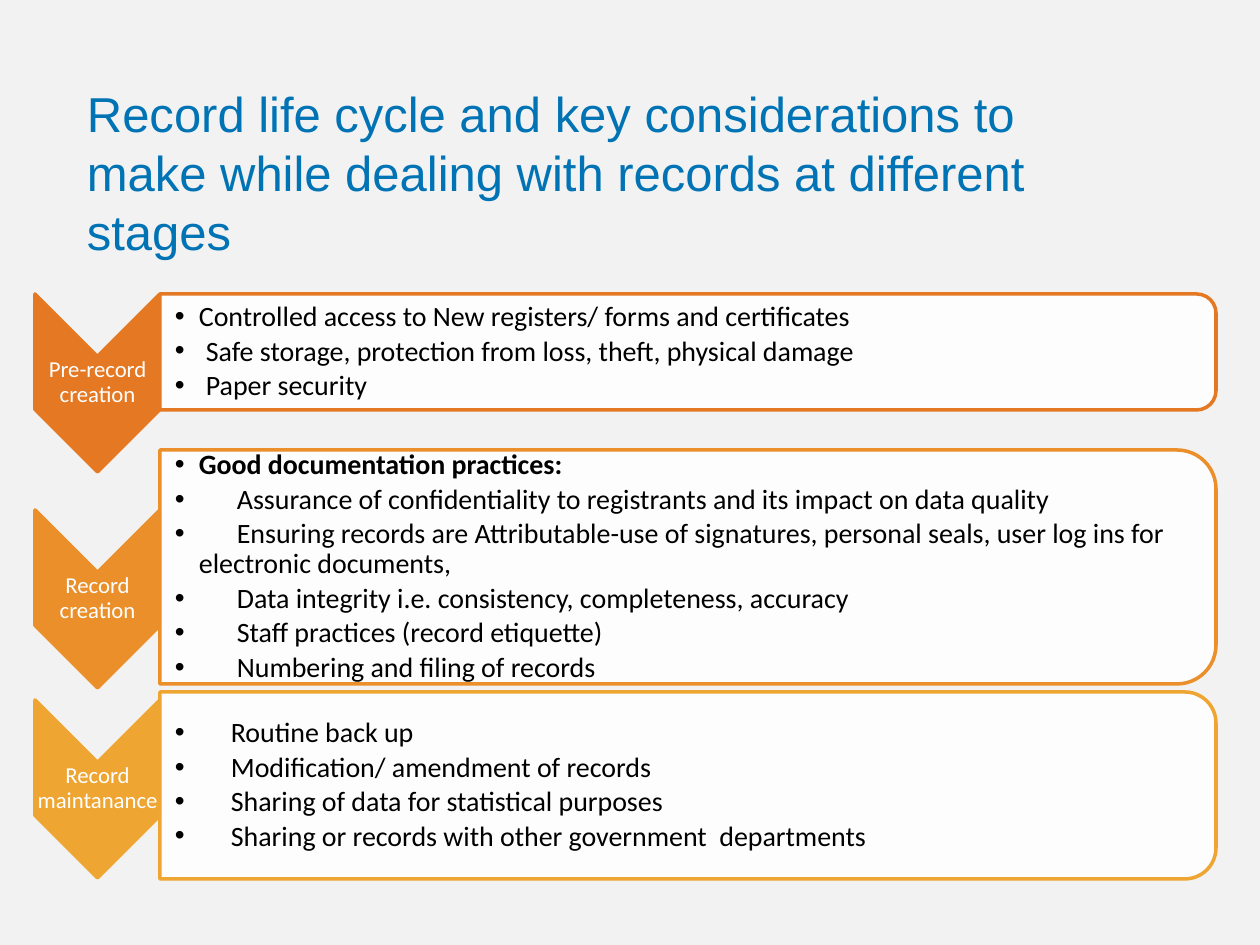
from lxml import etree
from pptx import Presentation
from pptx.dml.color import RGBColor
from pptx.enum.shapes import MSO_SHAPE
from pptx.enum.text import MSO_ANCHOR, PP_ALIGN
from pptx.oxml.ns import qn
from pptx.util import Inches, Pt

CHEVRON = MSO_SHAPE.CHEVRON
ROUNDED_END = MSO_SHAPE.ROUND_2_SAME_RECTANGLE
MIDDLE, TOP = MSO_ANCHOR.MIDDLE, MSO_ANCHOR.TOP
CENTER = PP_ALIGN.CENTER

GREY = RGBColor(0xF2, 0xF2, 0xF2)
BLUE = RGBColor(0x00, 0x73, 0xB5)
WHITE = RGBColor(0xFF, 0xFF, 0xFF)
BLACK = RGBColor(0x00, 0x00, 0x00)
DARK_ORANGE = RGBColor(0xE4, 0x78, 0x23)
ORANGE = RGBColor(0xEA, 0x8F, 0x2A)
AMBER = RGBColor(0xEF, 0xA5, 0x31)

PX = Inches(1) / 126
CHEVRON_LEFT, CHEVRON_WIDTH, CHEVRON_HEIGHT = 35, 125, 178
PANEL_LEFT, PANEL_WIDTH = 160, 1056
BULLET_GAP = 24


def px(length):
    return round(length * PX)


def add_turned(kind, left, top, width, height, fill, line):
    """Add a shape turned by 90 degrees that covers the given area."""
    shape = slide.shapes.add_shape(
        kind, px(left + (width - height) / 2), px(top + (height - width) / 2),
        px(height), px(width))
    shape.rotation = 90
    shape.shadow.inherit = False
    shape.fill.solid()
    shape.fill.fore_color.rgb = fill
    shape.line.color.rgb = line
    shape.line.width = Pt(2)
    return shape


def add_text(left, top, width, height, margins, anchor):
    frame = slide.shapes.add_textbox(px(left), px(top), px(width), px(height)).text_frame
    frame.word_wrap = True
    frame.vertical_anchor = anchor
    frame.margin_left, frame.margin_top, frame.margin_right, frame.margin_bottom = map(px, margins)
    return frame


prs = Presentation()
prs.slide_width, prs.slide_height = Inches(10), Inches(7.5)
slide = prs.slides.add_slide(prs.slide_layouts[6])
slide.background.fill.solid()
slide.background.fill.fore_color.rgb = GREY

# Title
title = add_text(74, 66, 1086, 209, (13, 18, 13, 6), TOP)
title.text = ("Record life cycle and key considerations to make "
              "while dealing with records at different stages")
heading = title.paragraphs[0]
heading.font.name, heading.font.size = "Arial", Pt(28)
heading.font.color.rgb = BLUE

# Stages: name, colour, chevron top, panel top, panel height, text indent, considerations
stages = [
    ("Pre-record creation", DARK_ORANGE, 294, 294, 116, 31, [
        "Controlled access to New registers/ forms and certificates",
        "Safe storage, protection from loss, theft, physical damage",
        "Paper security"]),
    ("Record creation", ORANGE, 510, 450, 234, 62, [
        "Good documentation practices:",
        "Assurance of confidentiality to registrants and its impact on data quality",
        "\tEnsuring records are Attributable-use of signatures, personal seals, "
        "user log ins for electronic documents,",
        "Data integrity i.e. consistency, completeness, accuracy",
        "Staff practices (record etiquette)",
        "Numbering and filing of records"]),
    ("Record maintanance", AMBER, 700, 692, 187, 56, [
        "Routine back up",
        "Modification/ amendment of records",
        "Sharing of data for statistical purposes",
        "Sharing or records with other government  departments"]),
]

for name, color, chevron_top, panel_top, panel_height, indent, considerations in stages:
    # Stage chevron and its label
    add_turned(CHEVRON, CHEVRON_LEFT, chevron_top, CHEVRON_WIDTH, CHEVRON_HEIGHT, color, color)
    label = add_text(CHEVRON_LEFT, chevron_top + 62, CHEVRON_WIDTH, 53, (1, 1, 1, 1), MIDDLE)
    label.text = name
    caption = label.paragraphs[0]
    caption.alignment, caption.line_spacing = CENTER, 0.9
    caption.font.name, caption.font.size = "Calibri", Pt(13)
    caption.font.color.rgb = WHITE

    # Panel, slightly see-through
    panel = add_turned(ROUNDED_END, PANEL_LEFT, panel_top, PANEL_WIDTH, panel_height, WHITE, color)
    white = panel.fill._xPr.find(qn("a:solidFill"))[0]
    etree.SubElement(white, qn("a:alpha")).set("val", "90000")

    # Considerations
    frame = add_text(PANEL_LEFT, panel_top + 6, PANEL_WIDTH - 11, panel_height - 12,
                     (15, 1, 1, 1), MIDDLE)
    frame.text = "\n".join(considerations)
    for number, paragraph in enumerate(frame.paragraphs):
        tabbed = paragraph.text.startswith("\t")
        hanging = BULLET_GAP if number == 0 and indent != 56 or tabbed else indent
        props = paragraph._p.get_or_add_pPr()
        props.set("marL", str(px(hanging)))
        props.set("indent", str(-px(hanging)))
        paragraph.line_spacing = 0.9
        paragraph.space_after = Pt(2.4)
        etree.SubElement(props, qn("a:buFont")).set("typeface", "Arial")
        etree.SubElement(props, qn("a:buChar")).set("char", "•")
        if tabbed:
            stops = etree.SubElement(props, qn("a:tabLst"))
            etree.SubElement(stops, qn("a:tab"), pos=str(px(indent)), algn="l")
        paragraph.font.name, paragraph.font.size = "Calibri", Pt(16)
        paragraph.font.color.rgb = BLACK
        paragraph.font.bold = paragraph.text.endswith(":")

prs.save("out.pptx")
